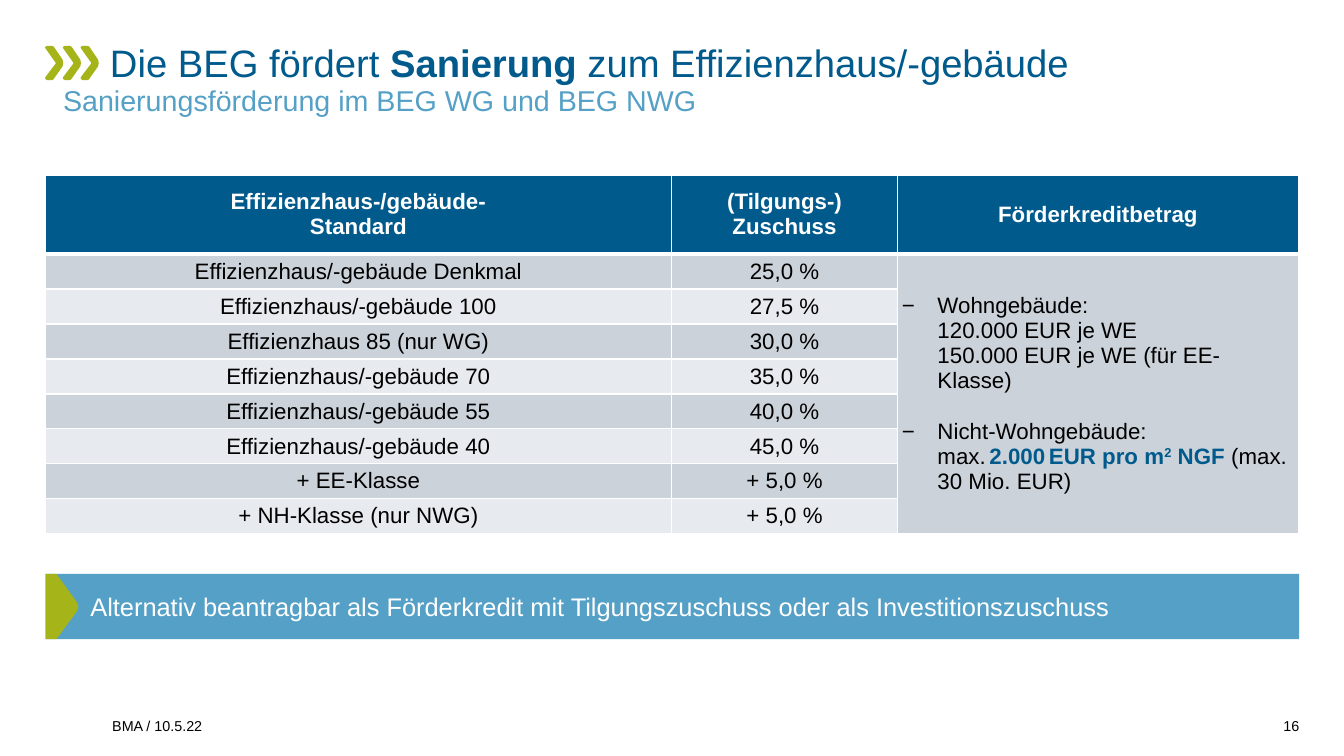
from collections import namedtuple

from lxml.etree import SubElement
from pptx import Presentation
from pptx.dml.color import RGBColor
from pptx.enum.shapes import MSO_SHAPE
from pptx.enum.text import MSO_ANCHOR, MSO_AUTO_SIZE, PP_ALIGN
from pptx.oxml.ns import qn
from pptx.util import Inches, Pt

WIDTH, HEIGHT = Inches(11.73), Inches(6.6)
NAVY, SKY, LIME = "005A8C", "55A0C6", "A4B419"
BLACK, WHITE = "000000", "FFFFFF"
BANDS = ("CCD2DA", "E7EAEE")

Box = namedtuple("Box", "x y w h")

CHEVRON = [(.13, 0), (.04, .02), (0, .05), (.06, .1), (.58, .49), (.58, .52), (.02, .91),
           (.01, .96), (.13, 1), (.33, 1), (.42, .99), (.48, .96), (.96, .6), (1, .5),
           (.96, .4), (.5, .04), (.44, .01), (.35, 0)]
MARKER = [(0, 0), (.33, 0), (.95, .43), (.99, .47), (1, .5), (.99, .54), (.95, .58),
          (.33, 1), (0, 1)]

HEADERS = ["Effizienzhaus-/gebäude-\nStandard", "(Tilgungs-) Zuschuss", "Förderkreditbetrag"]
RATES = [
    ("Effizienzhaus/-gebäude Denkmal", "25,0 %"),
    ("Effizienzhaus/-gebäude 100", "27,5 %"),
    ("Effizienzhaus 85 (nur WG)", "30,0 %"),
    ("Effizienzhaus/-gebäude 70", "35,0 %"),
    ("Effizienzhaus/-gebäude 55", "40,0 %"),
    ("Effizienzhaus/-gebäude 40", "45,0 %"),
    ("+ EE-Klasse", "+ 5,0 %"),
    ("+ NH-Klasse (nur NWG)", "+ 5,0 %"),
]
HOUSING = [("Wohngebäude:\n120.000 EUR je WE\n150.000 EUR je WE (für EE-Klasse)", {})]
KEY = {"color": NAVY, "bold": True}
NON_HOUSING = [
    ("Nicht-Wohngebäude:\nmax.", {}), (" ", {"size": 8}), ("2.000", KEY),
    (" ", {**KEY, "size": 8}), ("EUR pro m", KEY), ("2", {**KEY, "raised": True}),
    (" NGF ", KEY), ("(max. 30 Mio. EUR)", {}),
]


def percent(x, y, w, h):
    return Box(int(WIDTH * x / 100), int(HEIGHT * y / 100),
               int(WIDTH * w / 100), int(HEIGHT * h / 100))


def rgb(value):
    return RGBColor.from_string(value)


def add_run(p, text, size=14, color=BLACK, bold=False, raised=False):
    for i, line in enumerate(text.split("\n")):
        if i:
            p.add_line_break()
        r = p.add_run()
        r.text = line
        r.font.name = "Arial"
        r.font.size = Pt(size)
        r.font.bold = bold
        r.font.color.rgb = rgb(color)
        if raised:
            r.font._element.set("baseline", "30000")


def set_frame(tf, anchor=MSO_ANCHOR.TOP, inset_x=0, inset_y=0):
    tf.word_wrap = True
    tf.auto_size = MSO_AUTO_SIZE.NONE
    tf.vertical_anchor = anchor
    tf.margin_left = tf.margin_right = Inches(inset_x)
    tf.margin_top = tf.margin_bottom = Inches(inset_y)
    return tf.paragraphs[0]


def paint(sp, color):
    sp.shadow.inherit = False
    sp.fill.solid()
    sp.fill.fore_color.rgb = rgb(color)
    sp.line.fill.background()


def add_outline(s, box, points, color):
    corners = [(box.x + int(u * box.w), box.y + int(v * box.h)) for u, v in points]
    builder = s.shapes.build_freeform(*corners[0], scale=1)
    builder.add_line_segments(corners[1:], close=True)
    paint(builder.convert_to_shape(), color)


def add_label(s, box, text, size, color, anchor=MSO_ANCHOR.TOP, align=PP_ALIGN.LEFT):
    p = set_frame(s.shapes.add_textbox(*box).text_frame, anchor)
    p.alignment = align
    add_run(p, text, size, color)
    return p


def add_chevrons(s, box):
    for i in range(3):
        part = Box(box.x + int(box.w * .33 * i), box.y, int(box.w * .34), box.h)
        add_outline(s, part, CHEVRON, LIME)


def add_heading(s, box):
    title = s.shapes.title
    title.left, title.top, title.width = box.x, box.y, box.w
    title.height = int(box.h * .56)
    p = set_frame(title.text_frame)
    p.alignment = PP_ALIGN.LEFT
    p.line_spacing = .95
    p._p.get_or_add_pPr().set("indent", str(Inches(.41)))
    add_run(p, "Die BEG fördert ", 24, NAVY)
    add_run(p, "Sanierung", 24, NAVY, bold=True)
    add_run(p, " zum Effizienzhaus/-gebäude", 24, NAVY)
    below = Box(box.x, box.y + int(box.h * .51), box.w, int(box.h * .49))
    add_label(s, below, "Sanierungsförderung im BEG WG und BEG NWG", 18, SKY).line_spacing = .95


def style_cell(cell, fill, bottom=1, inset_x=.04, inset_y=.02):
    tcPr = cell._tc.get_or_add_tcPr()
    for side, width in zip("LRTB", (1, 1, 1, bottom)):
        ln = SubElement(tcPr, qn("a:ln" + side), w=str(Pt(width)))
        SubElement(SubElement(ln, qn("a:solidFill")), qn("a:srgbClr"), val=WHITE)
    cell.fill.solid()
    cell.fill.fore_color.rgb = rgb(fill)
    cell.vertical_anchor = MSO_ANCHOR.MIDDLE
    cell.margin_left = cell.margin_right = Inches(inset_x)
    cell.margin_top = cell.margin_bottom = Inches(inset_y)


def add_dash_item(p, parts):
    pPr = p._p.get_or_add_pPr()
    pPr.set("marL", str(Inches(.31)))
    pPr.set("indent", str(-Inches(.31)))
    SubElement(pPr, qn("a:buFont"), typeface="Arial")
    SubElement(pPr, qn("a:buChar"), char="−")
    for text, style in parts:
        add_run(p, text, **style)


def add_rates_table(s, box):
    frame = s.shapes.add_table(len(RATES) + 1, len(HEADERS), *box)
    table = frame.table
    table.first_row = table.horz_banding = False
    for column, share in zip(table.columns, (.5, .18, .32)):
        column.width = int(box.w * share)
    header_height = int(box.h * .22)
    for row in table.rows:
        row.height = (box.h - header_height) // len(RATES)
    table.rows[0].height = header_height

    for col, text in enumerate(HEADERS):
        cell = table.cell(0, col)
        style_cell(cell, NAVY, bottom=3)
        p = cell.text_frame.paragraphs[0]
        p.alignment = PP_ALIGN.CENTER
        add_run(p, text, color=WHITE, bold=True)

    for i, rate in enumerate(RATES):
        for col, text in enumerate(rate):
            cell = table.cell(i + 1, col)
            style_cell(cell, BANDS[i % 2], inset_x=.09, inset_y=.04)
            p = cell.text_frame.paragraphs[0]
            p.alignment = PP_ALIGN.CENTER
            add_run(p, text)
        style_cell(table.cell(i + 1, 2), BANDS[0])

    credit = table.cell(1, 2)
    credit.merge(table.cell(len(RATES), 2))
    tf = credit.text_frame
    add_dash_item(tf.paragraphs[0], HOUSING)
    p = tf.add_paragraph()
    p.space_before = Pt(16)
    add_dash_item(p, NON_HOUSING)


def add_banner(s, box):
    sp = s.shapes.add_shape(MSO_SHAPE.RECTANGLE, *box)
    paint(sp, SKY)
    p = set_frame(sp.text_frame, MSO_ANCHOR.MIDDLE, .39, .12)
    p.alignment = PP_ALIGN.LEFT
    add_run(p, "Alternativ beantragbar als Förderkredit mit Tilgungszuschuss "
               "oder als Investitionszuschuss", 16, WHITE)
    add_outline(s, Box(box.x, box.y, box.h // 2, box.h), MARKER, LIME)


def add_footer(s, box):
    number_width = int(box.w * .04)
    number = Box(box.x + box.w - number_width, box.y, number_width, box.h)
    add_label(s, number, "16", 9, BLACK, MSO_ANCHOR.BOTTOM, PP_ALIGN.RIGHT)
    note = Box(box.x, box.y, int(box.w * .95), box.h)
    add_label(s, note, "BMA / 10.5.22", 9, BLACK, MSO_ANCHOR.BOTTOM)


def main():
    prs = Presentation()
    prs.slide_width, prs.slide_height = WIDTH, HEIGHT
    s = prs.slides.add_slide(prs.slide_layouts[5])
    add_chevrons(s, percent(3.35, 6.06, 4, 4.55))
    add_heading(s, percent(4.69, 5.61, 92, 11.06))
    add_rates_table(s, percent(3.35, 23.18, 93.27, 47.42))
    add_banner(s, percent(3.4, 75.91, 93.27, 8.64))
    add_footer(s, percent(8.35, 92.88, 88.33, 4.24))
    prs.save("out.pptx")


if __name__ == "__main__":
    main()
